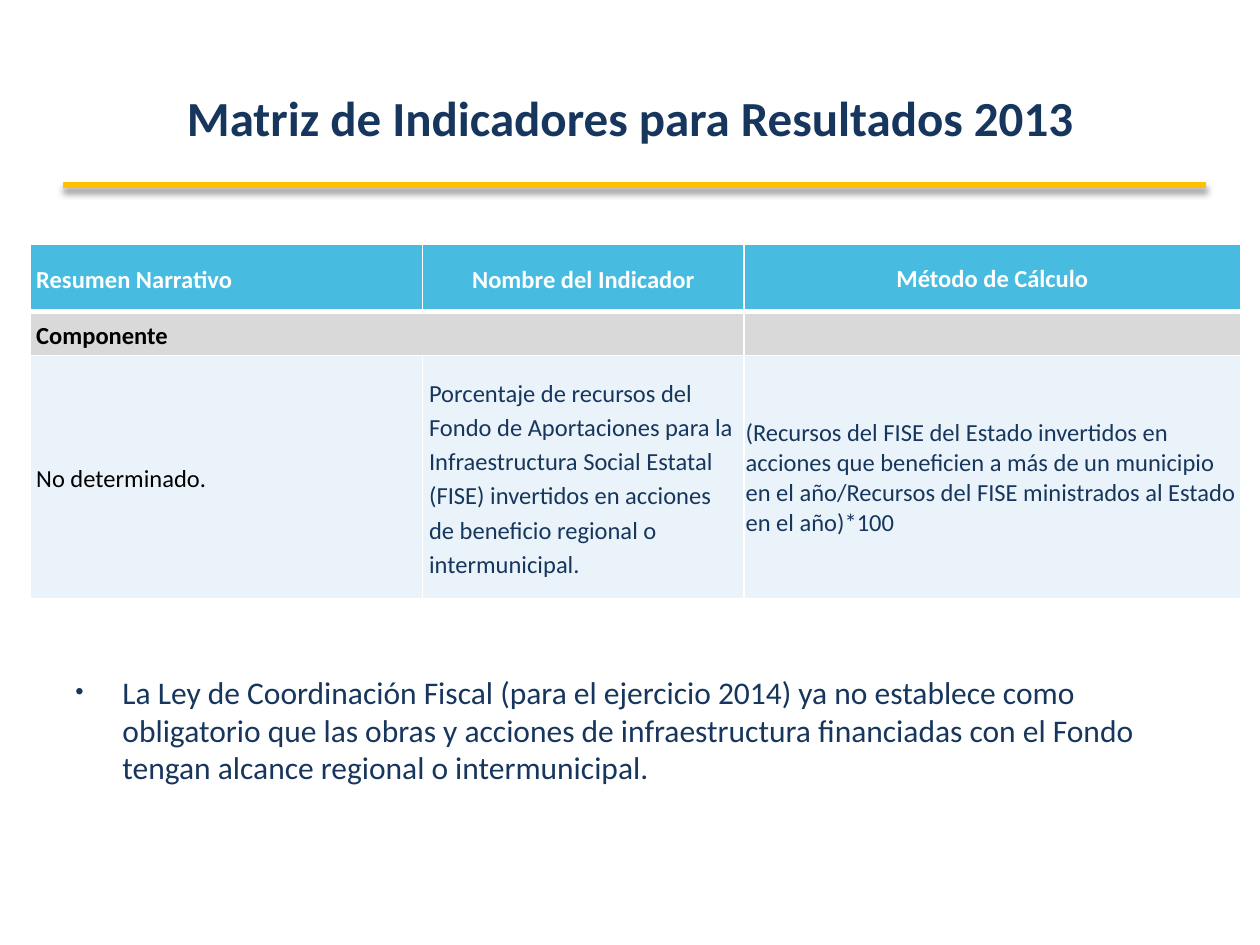
from lxml.etree import SubElement as Sub
from pptx import Presentation
from pptx.dml.color import RGBColor
from pptx.enum.shapes import MSO_CONNECTOR as Link
from pptx.enum.text import MSO_ANCHOR as Anchor, PP_ALIGN as Align
from pptx.oxml.ns import qn
from pptx.util import Cm, Pt

FACE = "Calibri"
NAVY, BLACK, WHITE = "17365D", "000000", "FFFFFF"
BLUE, GRAY, PALE, GOLD = "48BCE0", "D9D9D9", "E9F3F9", "FFC000"
MID, LEFT = Align.CENTER, Align.LEFT


def tint(code):
    """Turn a hex string into a colour."""
    return RGBColor.from_string(code)


def apply(item, vals):
    """Set each named value on an item."""
    for key, val in vals.items():
        setattr(item, key, val)


def write(para, text, size, code, bold=False, **form):
    """Put one formatted run in a paragraph."""
    apply(para, form)
    run = para.add_run()
    run.text = text
    apply(run.font, {"name": FACE, "size": Pt(size), "bold": bold})
    run.font.color.rgb = tint(code)


def node(root, tag, **vals):
    """Add an XML child with attributes."""
    return Sub(root, qn(tag), {key: str(val) for key, val in vals.items()})


def head(slide, box, text):
    """Place the slide title."""
    title = slide.shapes.title
    apply(title, dict(zip(("left", "top", "width", "height"), box)))
    frame = title.text_frame
    apply(frame, {"vertical_anchor": Anchor.MIDDLE, "word_wrap": True})
    write(frame.paragraphs[0], text, 28, NAVY, True, alignment=MID)


def rule(slide, box):
    """Draw the gold rule with its soft shadow."""
    x, y, w, h = box
    line = slide.shapes.add_connector(Link.STRAIGHT, x, y, x + w, y + h)
    line.line.width = Pt(3)
    line.line.color.rgb = tint(GOLD)
    glow = node(line._element.spPr, "a:effectLst")
    shade = node(glow, "a:outerShdw", blurRad=Pt(4), dist=Pt(3),
                 dir=90 * 60000, algn="t", rotWithShape=0)
    node(node(shade, "a:srgbClr", val=BLACK), "a:alpha", val=43000)


def edge(cell, top, base):
    """Give a cell white borders."""
    props = cell._tc.get_or_add_tcPr()
    for side, wide in zip("LRTB", (1, 1, top, base)):
        line = node(props, f"a:ln{side}", w=Pt(wide))
        node(node(line, "a:solidFill"), "a:srgbClr", val=WHITE)


def grid(slide, box, rows):
    """Place the indicator table."""
    wide, high = (7.92, 6.48, 10.01), (1.35, 0.89, 4.9)
    table = slide.shapes.add_table(len(high), len(wide), *box).table
    table.horz_banding = False
    for col, size in zip(table.columns, wide):
        col.width = Cm(size)
    for r, (fill, bold, cells) in enumerate(rows):
        table.rows[r].height = Cm(high[r])
        for c, (text, code, align) in enumerate(cells):
            cell = table.cell(r, c)
            edge(cell, 3 if r == 1 else 1, 3 if r == 0 else 1)
            cell.fill.solid()
            cell.fill.fore_color.rgb = tint(fill)
            last = c == len(wide) - 1
            pad = Cm(0.03 if last else 0.13)
            apply(cell, {"margin_left": pad, "margin_right": pad,
                         "margin_top": Cm(0.03 if last and text else 0),
                         "margin_bottom": 0,
                         "vertical_anchor": Anchor.MIDDLE})
            if text:
                write(cell.text_frame.paragraphs[0], text, 14, code, bold,
                      alignment=align, line_spacing=1.0 if last else 1.15)
    table.cell(1, 0).merge(table.cell(1, 1))


def note(slide, box, text):
    """Place the bulleted remark."""
    frame = slide.shapes.add_textbox(*box).text_frame
    frame.word_wrap = True
    para = frame.paragraphs[0]
    props = para._p.get_or_add_pPr()
    apply_ind = {"marL": Cm(0.95), "indent": -Cm(0.95)}
    for key, val in apply_ind.items():
        props.set(key, str(val))
    node(props, "a:buSzPct", val=75000)
    node(props, "a:buFont", typeface="Arial")
    node(props, "a:buChar", char="•")
    write(para, text, 18, NAVY)


def main():
    """Build and save the slide."""
    deck = Presentation()
    apply(deck, {"slide_width": Cm(25.4), "slide_height": Cm(19.05)})
    slide = deck.slides.add_slide(deck.slide_layouts[5])
    rows = [
        (BLUE, True, [("Resumen Narrativo", WHITE, LEFT),
                      ("Nombre del Indicador", WHITE, MID),
                      ("Método de Cálculo", WHITE, MID)]),
        (GRAY, True, [("Componente", BLACK, LEFT),
                      ("", BLACK, LEFT), ("", BLACK, LEFT)]),
        (PALE, False, [
            ("No determinado.", BLACK, LEFT),
            ("Porcentaje de recursos del Fondo de Aportaciones para la "
             "Infraestructura Social Estatal (FISE) invertidos en acciones "
             "de beneficio regional o intermunicipal.", NAVY, LEFT),
            ("(Recursos del FISE del Estado invertidos en acciones que "
             "beneficien a más de un municipio en el año/Recursos del FISE "
             "ministrados al Estado en el año)*100", NAVY, LEFT)]),
    ]
    head(slide, (Cm(1.27), Cm(0.76), Cm(22.86), Cm(3.18)),
         "Matriz de Indicadores para Resultados 2013")
    grid(slide, (Cm(0.6), Cm(4.93), Cm(24.41), Cm(7.14)), rows)
    rule(slide, (Cm(1.27), Cm(3.73), Cm(23.04), 0))
    note(slide, (Cm(1.27), Cm(13.44), Cm(22.86), Cm(2.77)),
         "La Ley de Coordinación Fiscal (para el ejercicio 2014) ya no "
         "establece como obligatorio que las obras y acciones de "
         "infraestructura financiadas con el Fondo tengan alcance regional "
         "o intermunicipal.")
    deck.save("out.pptx")


if __name__ == "__main__":
    main()
